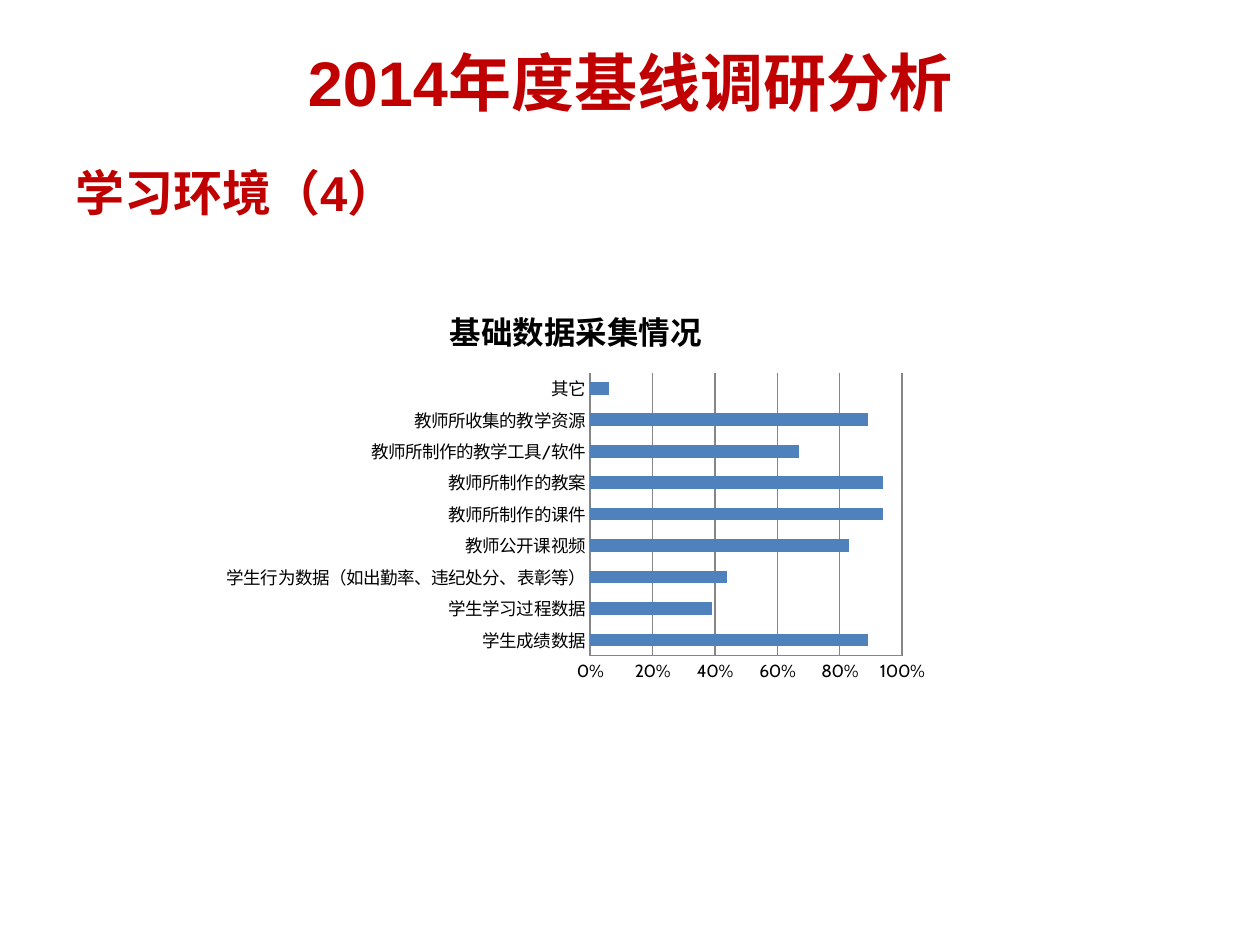
from lxml import etree
from pptx import Presentation
from pptx.chart.data import CategoryChartData
from pptx.dml.color import RGBColor
from pptx.enum.chart import XL_CHART_TYPE as ChartType, XL_TICK_MARK as TickMark
from pptx.enum.text import MSO_ANCHOR as Anchor, PP_ALIGN as Align
from pptx.oxml.ns import qn
from pptx.util import Cm, Pt

COLORS = {"heading": "C00000", "text": "000000", "bar": "4F81BD", "line": "868686"}

# Share of schools collecting each kind of data, from the bottom bar up
COLLECTED = {
    "学生成绩数据": 0.89,
    "学生学习过程数据": 0.39,
    "学生行为数据（如出勤率、违纪处分、表彰等）": 0.44,
    "教师公开课视频": 0.83,
    "教师所制作的课件": 0.94,
    "教师所制作的教案": 0.94,
    "教师所制作的教学工具/软件": 0.67,
    "教师所收集的教学资源": 0.89,
    "其它": 0.06,
}


def color(name):
    return RGBColor.from_string(COLORS[name])


def style_font(font, face, size, color_name, bold=False):
    font.name = face
    font.size = Pt(size)
    font.bold = bold
    font.color.rgb = color(color_name)


def write_heading(frame, text, size, align):
    frame.word_wrap = True
    paragraph = frame.paragraphs[0]
    paragraph.alignment = align
    run = paragraph.add_run()
    run.text = text
    style_font(run.font, "Arial", size, "heading", bold=True)
    return paragraph


def add_title(slide, text):
    title = slide.shapes.title
    title.left, title.top, title.width, title.height = Cm(0), Cm(0.53), Cm(25.4), Cm(2.21)
    title.text_frame.vertical_anchor = Anchor.MIDDLE
    write_heading(title.text_frame, text, 36, Align.CENTER)


def add_subtitle(slide, text):
    box = slide.shapes.add_textbox(Cm(1.27), Cm(2.92), Cm(22.86), Cm(2.21))
    paragraph = write_heading(box.text_frame, text, 28, Align.JUSTIFY)
    paragraph.line_spacing = 1.2


def set_plot_layout(chart, **fractions):
    """Fix the inner plot area, given as fractions of the chart."""
    plot_area = chart.plots[0]._element.getparent()
    for old in plot_area.findall(qn("c:layout")):
        plot_area.remove(old)
    layout = etree.Element(qn("c:layout"))
    manual = etree.SubElement(layout, qn("c:manualLayout"))
    settings = {"layoutTarget": "inner", "xMode": "edge", "yMode": "edge", **fractions}
    for tag, value in settings.items():
        etree.SubElement(manual, qn(f"c:{tag}")).set("val", str(value))
    plot_area.insert(0, layout)


def style_axis(axis):
    axis.major_tick_mark = axis.minor_tick_mark = TickMark.NONE
    axis.format.line.color.rgb = color("line")
    style_font(axis.tick_labels.font, "Cabin", 10, "text")


def add_bar_chart(slide, heading, values):
    data = CategoryChartData()
    data.categories = list(values)
    data.add_series("Series 1", list(values.values()))
    chart = slide.shapes.add_chart(
        ChartType.BAR_CLUSTERED, Cm(4.29), Cm(5.72), Cm(14.63), Cm(8.15), data
    ).chart
    chart.has_legend = False
    style_font(chart.font, "Cabin", 10, "text")

    # Heading
    chart.has_title = True
    run = chart.chart_title.text_frame.paragraphs[0].add_run()
    run.text = heading
    style_font(run.font, "Cabin", 18, "text", bold=True)
    chart.chart_title.include_in_layout = False

    # Axes
    style_axis(chart.category_axis)
    percent = chart.value_axis
    style_axis(percent)
    percent.minimum_scale, percent.maximum_scale, percent.major_unit = 0, 1, 0.2
    percent.tick_labels.number_format = "0%"
    percent.tick_labels.number_format_is_linked = False
    percent.has_major_gridlines = True
    percent.major_gridlines.format.line.color.rgb = color("line")

    # Bars
    plot = chart.plots[0]
    plot.gap_width = 150
    plot.vary_by_categories = False
    fill = plot.series[0].format.fill
    fill.solid()
    fill.fore_color.rgb = color("bar")
    set_plot_layout(chart, x=0.52, y=0.22, w=0.43, h=0.7)


def main():
    deck = Presentation()
    deck.slide_width, deck.slide_height = Cm(25.4), Cm(19.05)
    slide = deck.slides.add_slide(deck.slide_layouts[5])
    add_title(slide, "2014年度基线调研分析")
    add_subtitle(slide, "学习环境（4）")
    add_bar_chart(slide, "基础数据采集情况", COLLECTED)
    deck.save("out.pptx")


if __name__ == "__main__":
    main()
